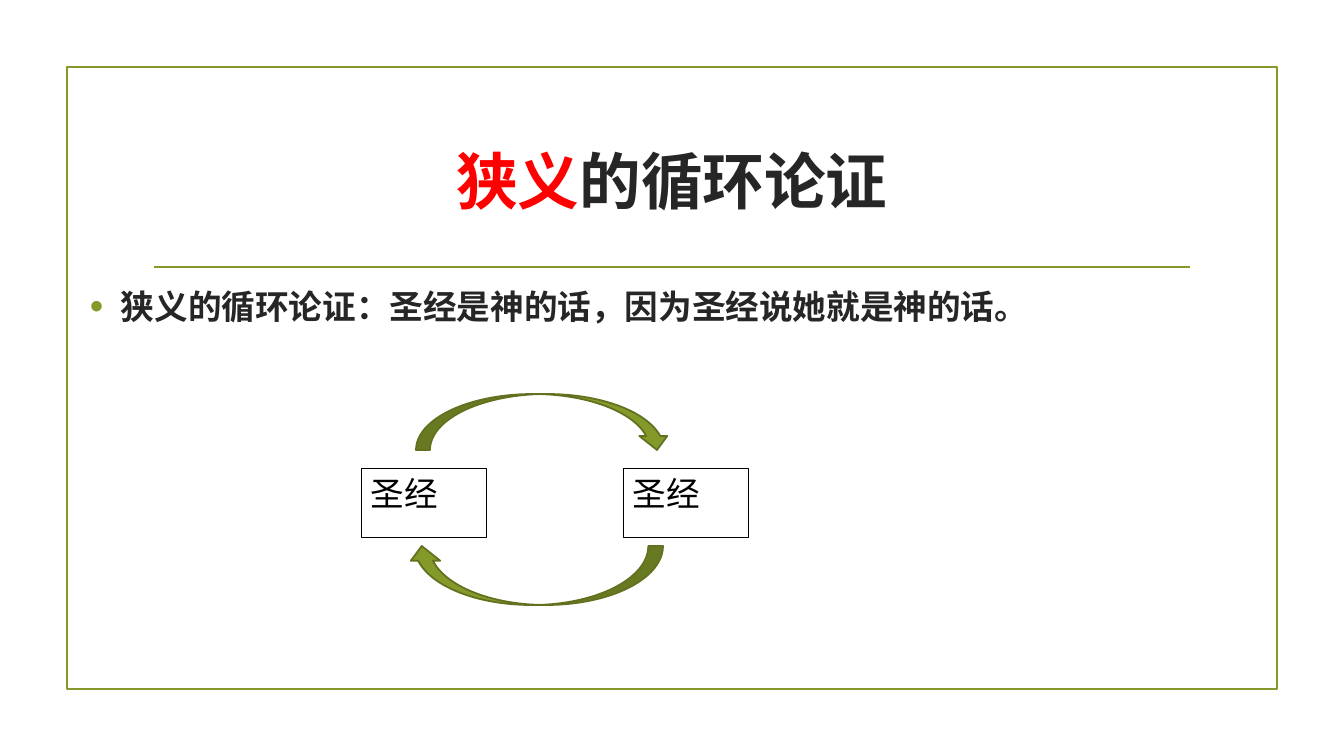
from lxml import etree
from pptx import Presentation
from pptx.dml.color import RGBColor
from pptx.enum.shapes import MSO_CONNECTOR, MSO_SHAPE
from pptx.enum.text import MSO_ANCHOR, PP_ALIGN
from pptx.oxml.ns import qn
from pptx.util import Pt

RECT, ARROW = MSO_SHAPE.RECTANGLE, MSO_SHAPE.CURVED_DOWN_ARROW
LINE = MSO_CONNECTOR.STRAIGHT
MIDDLE, TOP = MSO_ANCHOR.MIDDLE, MSO_ANCHOR.TOP
CENTER, LEFT = PP_ALIGN.CENTER, PP_ALIGN.LEFT

GREEN = RGBColor(0x83, 0x99, 0x2A)
OLIVE = RGBColor(0x61, 0x71, 0x1F)
DARK = RGBColor(0x26, 0x26, 0x26)
RED = RGBColor(0xFF, 0, 0)
BLACK = RGBColor(0, 0, 0)
WHITE = RGBColor(0xFF, 0xFF, 0xFF)
FONT = "Times New Roman"

# Content: text with colour, then places in px
TITLE = [("狭义", RED), ("的循环论证", DARK)]
POINT = [("狭义的循环论证：圣经是神的话，因为圣经说她就是神的话。", DARK)]
LABEL = [("圣经", BLACK)]
FRAME = (67, 67, 1210, 622)
RULE = (154, 267, 1190, 267)
HEAD = (143, 108, 1058, 144)
BODY = (80, 281, 1230, 66)
BOXES = [(x, 468, 125, 69) for x in (361, 623)]
ARROWS = [((416, 394, 255, 56), 0), ((407, 546, 256, 59), 180)]
INDENT = 31


def px(n):
    return round(n * 914400 / 100.8)


def place(area):
    return [px(n) for n in area]


def draw(kind, area, line, width, fill=None):
    shape = slide.shapes.add_shape(kind, *place(area))
    shape.shadow.inherit = False
    if fill is None:
        shape.fill.background()
    else:
        shape.fill.solid()
        shape.fill.fore_color.rgb = fill
    shape.line.color.rgb = line
    shape.line.width = Pt(width)
    return shape


def write(shape, parts, size=24, bold=False, align=LEFT, anchor=TOP, bullet=None):
    frame = shape.text_frame
    frame.word_wrap = True
    frame.vertical_anchor = anchor
    para = frame.paragraphs[0]
    para.alignment = align
    if bullet:
        props = para._p.get_or_add_pPr()
        props.set("marL", str(px(INDENT)))
        props.set("indent", str(-px(INDENT)))
        tint = etree.SubElement(props, qn("a:buClr"))
        etree.SubElement(tint, qn("a:srgbClr"), val=str(GREEN))
        etree.SubElement(props, qn("a:buSzPct"), val="115000")
        etree.SubElement(props, qn("a:buFont"), typeface="Arial")
        etree.SubElement(props, qn("a:buChar"), char=bullet)
    for text, color in parts:
        run = para.add_run()
        run.text = text
        run.font.name = FONT
        run.font.size = Pt(size)
        run.font.bold = bold
        run.font.color.rgb = color


deck = Presentation()
deck.slide_width, deck.slide_height = px(1344), px(756)
slide = deck.slides.add_slide(deck.slide_layouts[6])

# Frame and rule
draw(RECT, FRAME, GREEN, 1.25)
rule = slide.shapes.add_connector(LINE, *place(RULE))
rule.line.color.rgb = GREEN
rule.line.width = Pt(1.25)
etree.SubElement(rule._element.spPr, qn("a:effectLst"))

# Title and point
write(slide.shapes.add_textbox(*place(HEAD)), TITLE, size=44, bold=True,
      align=CENTER, anchor=MIDDLE)
write(slide.shapes.add_textbox(*place(BODY)), POINT, bold=True, bullet="•")

# Circle of two boxes and two arrows
for area in BOXES:
    write(draw(RECT, area, BLACK, 0.5, WHITE), LABEL)
for area, turn in ARROWS:
    draw(ARROW, area, OLIVE, 1.25, GREEN).rotation = turn

deck.save("out.pptx")
